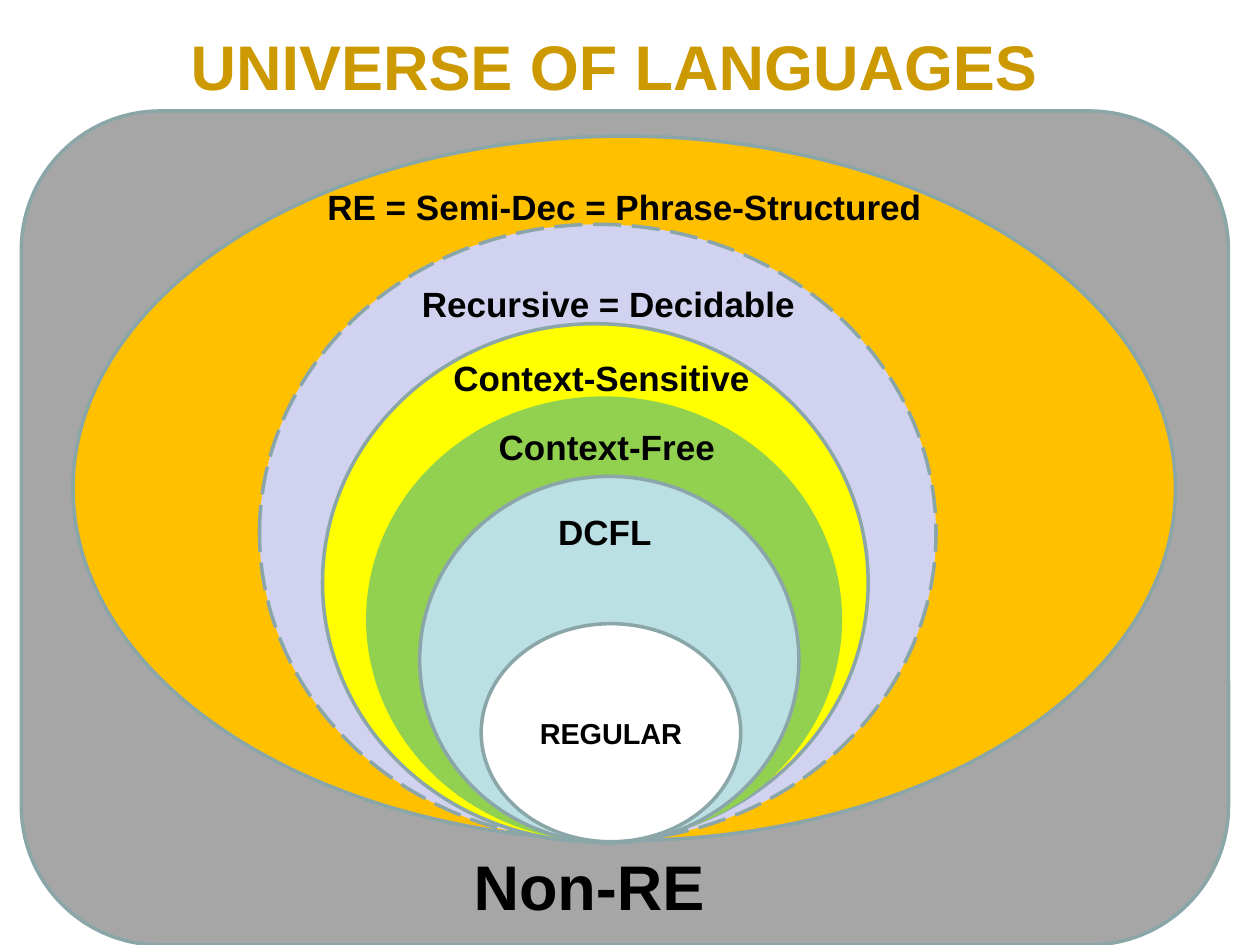
from pptx import Presentation
from pptx.dml.color import RGBColor
from pptx.enum.dml import MSO_LINE
from pptx.enum.shapes import MSO_SHAPE
from pptx.enum.text import MSO_ANCHOR, PP_ALIGN
from pptx.util import Pt

GOLD = RGBColor(0xCC, 0x99, 0x00)
BLACK = RGBColor(0, 0, 0)
GRAY = RGBColor(0xA6, 0xA6, 0xA6)
EDGE = RGBColor(0x8A, 0xA6, 0xA8)
AMBER = RGBColor(0xFF, 0xC0, 0x00)
LILAC = RGBColor(0xD1, 0xD1, 0xF0)
YELLOW = RGBColor(0xFF, 0xFF, 0x00)
GREEN = RGBColor(0x92, 0xD0, 0x50)
AQUA = RGBColor(0xBB, 0xE0, 0xE3)
WHITE = RGBColor(0xFF, 0xFF, 0xFF)

TITLE = (54, 12.2, 594, 51)
WORLD = (12.2, 63.4, 689.8, 476.6)

# ring box, fill, edge, dash, label, label box
RINGS = [
    ((29.5, 14.4, 630, 402.5), AMBER, EDGE, None,
     "RE = Semi-Dec = Phrase-Structured", (167.8, 38.8, 367.2, 31.5)),
    ((136.1, 64.8, 386.6, 352.8), LILAC, EDGE, MSO_LINE.LONG_DASH,
     "Recursive = Decidable", (221.8, 94.3, 228.2, 31.5)),
    ((172.1, 121.6, 311.8, 295.9), YELLOW, EDGE, None,
     "Context-Sensitive", (239.8, 136.8, 186.5, 31.5)),
    ((198, 164.1, 270, 252.7), GREEN, GREEN, None,
     "Context-Free", (265.7, 176.4, 148.3, 31.5)),
    ((227.6, 208.8, 216.7, 209.5), AQUA, EDGE, None,
     "DCFL", (299.6, 224.6, 72.7, 31.5)),
]
CORE = (262.8, 293, 148.3, 124.6)
OUTER = (251.3, 417.6, 174.2, 51)


def shift(box, base):
    return (base[0] + box[0], base[1] + box[1], box[2], box[3])


def write(shape, text, size, color=BLACK, align=PP_ALIGN.LEFT):
    para = shape.text_frame.paragraphs[0]
    para.alignment = align
    run = para.add_run()
    run.text = text
    font = run.font
    font.name = "Arial"
    font.size = Pt(size)
    font.bold = True
    font.color.rgb = color


def draw(slide, kind, box, fill, edge=EDGE, dash=None):
    shape = slide.shapes.add_shape(kind, *map(Pt, box))
    shape.shadow.inherit = False
    shape.fill.solid()
    shape.fill.fore_color.rgb = fill
    shape.line.color.rgb = edge
    shape.line.width = Pt(2)
    if dash:
        shape.line.dash_style = dash
    return shape


def label(slide, box, text, size):
    note = slide.shapes.add_textbox(*map(Pt, box))
    note.text_frame.word_wrap = False
    write(note, text, size)


def head(slide, box):
    title = slide.shapes.title
    title.left, title.top, title.width, title.height = map(Pt, box)
    title.text_frame.vertical_anchor = MSO_ANCHOR.TOP
    write(title, "UNIVERSE OF LANGUAGES", 36, GOLD, PP_ALIGN.CENTER)


def world(slide, box):
    draw(slide, MSO_SHAPE.ROUNDED_RECTANGLE, box, GRAY)
    label(slide, shift(OUTER, box), "Non-RE", 36)
    for ring, fill, edge, dash, text, spot in RINGS:
        draw(slide, MSO_SHAPE.OVAL, shift(ring, box), fill, edge, dash)
        label(slide, shift(spot, box), text, 20)
    core = draw(slide, MSO_SHAPE.OVAL, shift(CORE, box), WHITE)
    core.text_frame.vertical_anchor = MSO_ANCHOR.MIDDLE
    write(core, "REGULAR", 16.5, align=PP_ALIGN.CENTER)


def main():
    deck = Presentation()
    deck.slide_width, deck.slide_height = Pt(720), Pt(540)
    slide = deck.slides.add_slide(deck.slide_layouts[5])
    head(slide, TITLE)
    world(slide, WORLD)
    deck.save("out.pptx")


if __name__ == "__main__":
    main()
